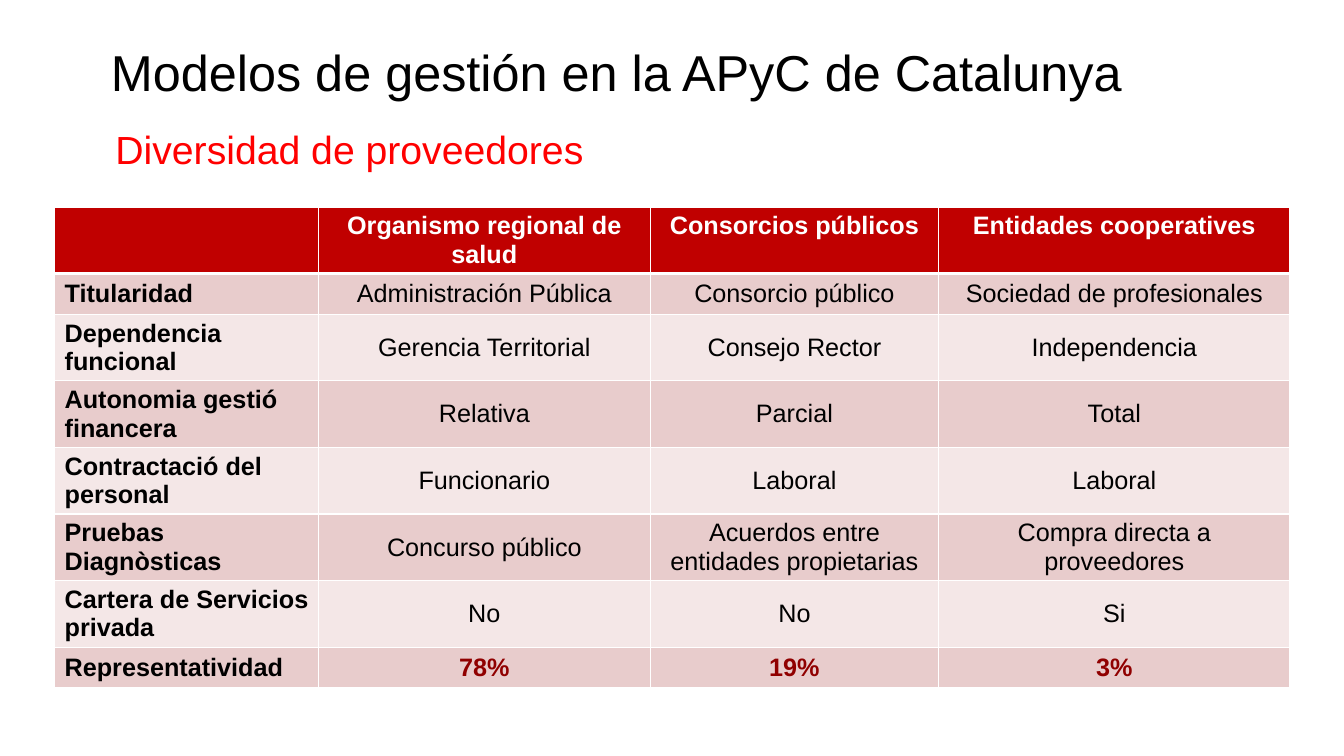
"""Slide comparing the management models of primary care in Catalunya."""
from lxml import etree
from pptx import Presentation
from pptx.dml.color import RGBColor
from pptx.enum.text import MSO_ANCHOR as Anchor, MSO_AUTO_SIZE as AutoSize, PP_ALIGN as Align
from pptx.oxml.ns import qn
from pptx.util import Pt

BLACK = RGBColor(0x00, 0x00, 0x00)
WHITE = RGBColor(0xFF, 0xFF, 0xFF)
RED = RGBColor(0xFF, 0x00, 0x00)
HEADER_RED = RGBColor(0xC0, 0x00, 0x00)
SHARE_RED = RGBColor(0x90, 0x00, 0x00)
BANDS = [RGBColor(0xF4, 0xE7, 0xE7), RGBColor(0xE8, 0xCC, 0xCC)]

MODELS = [
    ["", "Organismo regional de salud", "Consorcios públicos", "Entidades cooperatives"],
    ["Titularidad", "Administración Pública", "Consorcio público", "Sociedad de profesionales"],
    ["Dependencia funcional", "Gerencia Territorial", "Consejo Rector", "Independencia"],
    ["Autonomia gestió financera", "Relativa", "Parcial", "Total"],
    ["Contractació del personal", "Funcionario", "Laboral", "Laboral"],
    ["Pruebas Diagnòsticas", "Concurso público", "Acuerdos entre entidades propietarias",
     "Compra directa a proveedores"],
    ["Cartera de Servicios privada", "No", "No", "Si"],
    ["Representatividad", "78%", "19%", "3%"],
]
COLUMN_WIDTHS = [188.5, 237, 206, 251]
ONE_LINE, TWO_LINES = 29.2, 47.5
ROW_HEIGHTS = [TWO_LINES, ONE_LINE] + [TWO_LINES] * 5 + [ONE_LINE]
LAST_ROW = len(MODELS) - 1


def write(frame, text, size, color, align, bold=False):
    frame.text = text
    paragraph = frame.paragraphs[0]
    paragraph.alignment = align
    font = paragraph.runs[0].font if paragraph.runs else paragraph.font
    font.name, font.size, font.bold = "Arial", Pt(size), bold
    font.color.rgb = color
    return paragraph


def add_borders(cell, bottom_width):
    properties = cell._tc.get_or_add_tcPr()
    for side, width in [("L", 1), ("R", 1), ("T", 1), ("B", bottom_width)]:
        line = etree.SubElement(properties, qn(f"a:ln{side}"), w=str(Pt(width)))
        fill = etree.SubElement(line, qn("a:solidFill"))
        etree.SubElement(fill, qn("a:srgbClr"), val=str(WHITE))


presentation = Presentation()
presentation.slide_width, presentation.slide_height = Pt(960), Pt(540)
slide = presentation.slides.add_slide(presentation.slide_layouts[5])

title = slide.shapes.title
title.left, title.top, title.width, title.height = Pt(72), Pt(31), Pt(816), Pt(70.5)
subtitle = slide.shapes.add_textbox(Pt(-86.5), Pt(90), Pt(672), Pt(24))
for heading, text, size, color, align in [
    (title, "Modelos de gestión en la APyC de Catalunya", 36, BLACK, Align.LEFT),
    (subtitle, "Diversidad de proveedores", 28, RED, Align.CENTER),
]:
    frame = heading.text_frame
    frame.word_wrap = True
    frame.auto_size = AutoSize.NONE
    frame.vertical_anchor = Anchor.TOP
    write(frame, text, size, color, align).line_spacing = 0.9

comparison = slide.shapes.add_table(
    len(MODELS), len(COLUMN_WIDTHS), Pt(39), Pt(147.8),
    Pt(sum(COLUMN_WIDTHS)), Pt(sum(ROW_HEIGHTS))).table
for column, width in zip(comparison.columns, COLUMN_WIDTHS):
    column.width = Pt(width)
for row, height in zip(comparison.rows, ROW_HEIGHTS):
    row.height = Pt(height)

for r, values in enumerate(MODELS):
    for c, value in enumerate(values):
        cell = comparison.cell(r, c)
        is_header, is_label, is_share = r == 0, c == 0, r == LAST_ROW and c > 0
        add_borders(cell, 3 if is_header else 1)
        cell.fill.solid()
        cell.fill.fore_color.rgb = HEADER_RED if is_header else BANDS[r % 2]
        cell.vertical_anchor = Anchor.TOP if is_header else Anchor.MIDDLE
        color = WHITE if is_header else SHARE_RED if is_share else BLACK
        write(cell.text_frame, value, 18, color, Align.LEFT if is_label else Align.CENTER,
              bold=is_header or is_label or is_share)

presentation.save("out.pptx")
